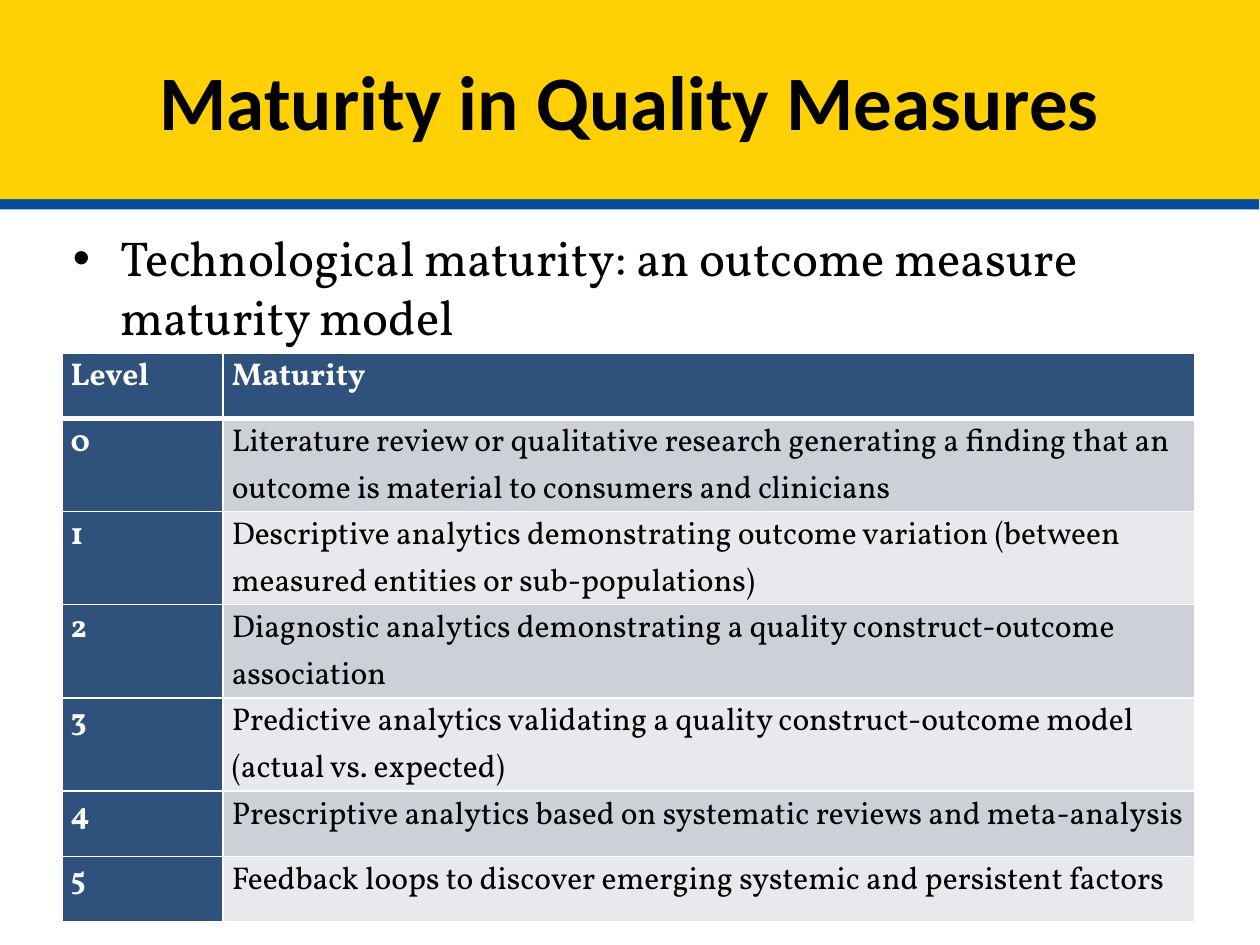
"""Build the slide on maturity in quality measures."""
from lxml import etree
from pptx import Presentation
from pptx.dml.color import RGBColor
from pptx.enum.shapes import MSO_SHAPE
from pptx.enum.text import MSO_ANCHOR, PP_ALIGN
from pptx.oxml.ns import qn
from pptx.util import Inches, Pt

RECTANGLE = MSO_SHAPE.RECTANGLE
MIDDLE = MSO_ANCHOR.MIDDLE
CENTER = PP_ALIGN.CENTER

YELLOW = RGBColor(0xFF, 0xD0, 0x04)
BAND_BLUE = RGBColor(0x08, 0x4A, 0x9C)
TABLE_BLUE = RGBColor(0x2F, 0x52, 0x7D)
DARK_GRAY = RGBColor(0xCD, 0xD1, 0xD7)
LIGHT_GRAY = RGBColor(0xE8, 0xE9, 0xEC)
BLACK = RGBColor(0, 0, 0)
WHITE = RGBColor(0xFF, 0xFF, 0xFF)

LEVELS = [
    ("Level", "Maturity"),
    ("0", "Literature review or qualitative research generating a finding "
          "that an outcome is material to consumers and clinicians"),
    ("1", "Descriptive analytics demonstrating outcome variation "
          "(between measured entities or sub-populations)"),
    ("2", "Diagnostic analytics demonstrating a quality construct-outcome association"),
    ("3", "Predictive analytics validating a quality construct-outcome model "
          "(actual vs. expected)"),
    ("4", "Prescriptive analytics based on systematic reviews and meta-analysis"),
    ("5", "Feedback loops to discover emerging systemic and persistent factors"),
]
ROW_HEIGHTS = [0.52] + [0.74] * 4 + [0.52] * 2


def add_text(paragraph, text, font_name, size, color, bold=False):
    run = paragraph.add_run()
    run.text = text
    run.font.name = font_name
    run.font.size = Pt(size)
    run.font.bold = bold
    run.font.color.rgb = color


def add_border(cell, side, width):
    properties = cell._tc.get_or_add_tcPr()
    line = etree.Element(qn(f"a:{side}"), w=str(Pt(width)))
    fill = etree.SubElement(line, qn("a:solidFill"))
    etree.SubElement(fill, qn("a:srgbClr"), val=str(WHITE))
    properties.find(qn("a:solidFill")).addprevious(line)


presentation = Presentation()
presentation.slide_width = Inches(10)
presentation.slide_height = Inches(7.5)
slide = presentation.slides.add_slide(presentation.slide_layouts[6])

title = slide.shapes.add_shape(RECTANGLE, 0, 0, Inches(10), Inches(1.58))
title.fill.solid()
title.fill.fore_color.rgb = YELLOW
title.line.fill.background()
title.shadow.inherit = False
effects = title.element.spPr.find(qn("a:effectLst"))
shadow = etree.SubElement(effects, qn("a:outerShdw"), blurRad="0",
                          dist=str(Pt(6)), dir=str(94 * 60000), rotWithShape="0")
etree.SubElement(shadow, qn("a:srgbClr"), val=str(BAND_BLUE))
title.text_frame.vertical_anchor = MIDDLE
paragraph = title.text_frame.paragraphs[0]
paragraph.alignment = CENTER
add_text(paragraph, "Maturity in Quality Measures", "Calibri", 44, BLACK, True)

body = slide.shapes.add_textbox(Inches(0.48), Inches(1.76), Inches(9), Inches(0.91))
body.text_frame.word_wrap = True
paragraph = body.text_frame.paragraphs[0]
paragraph.space_before = Pt(5.6)
properties = paragraph._p.get_or_add_pPr()
properties.set("marL", str(Inches(0.38)))
properties.set("indent", str(Inches(-0.38)))
etree.SubElement(properties, qn("a:buFont"), typeface="Arial")
etree.SubElement(properties, qn("a:buChar"), char="•")
add_text(paragraph, "Technological maturity: an outcome measure maturity model",
         "Vollkorn", 28, BLACK)

table_frame = slide.shapes.add_table(len(LEVELS), 2, Inches(0.49), Inches(2.8),
                                     Inches(8.99), Inches(sum(ROW_HEIGHTS)))
table = table_frame.table
table.first_col = True
table.columns[0].width = Inches(1.28)
table.columns[1].width = Inches(7.71)
for row_index, texts in enumerate(LEVELS):
    table.rows[row_index].height = Inches(ROW_HEIGHTS[row_index])
    for column_index, text in enumerate(texts):
        is_header = row_index == 0 or column_index == 0
        row_color = DARK_GRAY if row_index % 2 else LIGHT_GRAY
        cell = table.cell(row_index, column_index)
        cell.fill.solid()
        cell.fill.fore_color.rgb = TABLE_BLUE if is_header else row_color
        cell.margin_left = cell.margin_right = Inches(0.07)
        cell.margin_top = cell.margin_bottom = 0
        for side in ("lnL", "lnR", "lnT", "lnB"):
            is_header_rule = (row_index, side) in ((0, "lnB"), (1, "lnT"))
            add_border(cell, side, 3 if is_header_rule else 1)
        paragraph = cell.text_frame.paragraphs[0]
        paragraph.line_spacing = 1.07
        add_text(paragraph, text, "Vollkorn", 18, WHITE if is_header else BLACK, is_header)

presentation.save("out.pptx")
